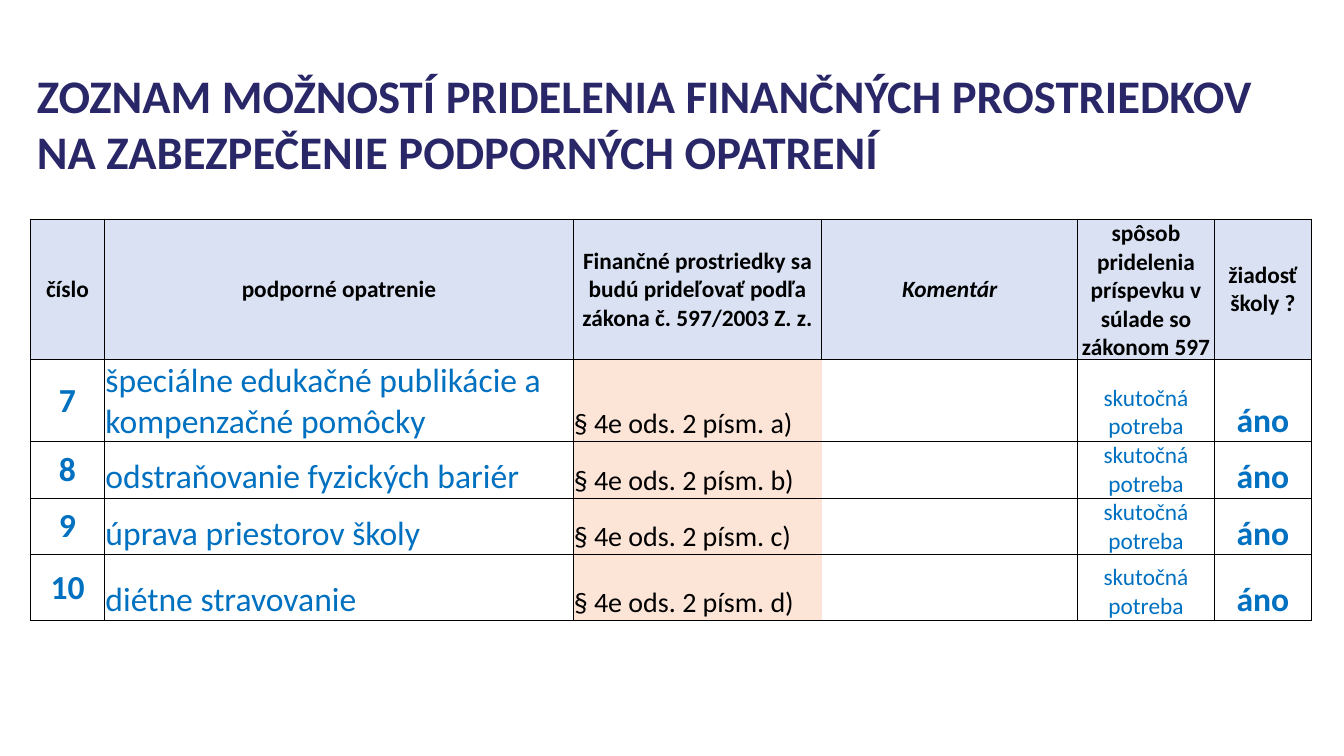
from dataclasses import dataclass

from lxml.etree import SubElement
from pptx import Presentation
from pptx.dml.color import RGBColor as RGB
from pptx.enum.text import MSO_ANCHOR as Anchor, PP_ALIGN as Align
from pptx.oxml.ns import qn
from pptx.util import Pt


@dataclass(frozen=True)
class Theme:
    font: str = "Calibri"
    navy: RGB = RGB(0x2A, 0x27, 0x68)
    blue: RGB = RGB(0x00, 0x70, 0xC0)
    black: RGB = RGB(0, 0, 0)
    header_fill: RGB = RGB(0xD9, 0xE1, 0xF2)
    law_fill: RGB = RGB(0xFC, 0xE4, 0xD6)
    title: int = 50
    large: int = 36
    medium: int = 30
    small: int = 25
    thick: float = 1
    thin: float = 0.5


@dataclass(frozen=True)
class CellStyle:
    size: int
    color: RGB
    bold: bool = False
    italic: bool = False
    align: Align = Align.CENTER
    anchor: Anchor = Anchor.BOTTOM
    fill: RGB | None = None


T = Theme()
LAW, COMMENT = 2, 3
WIDTHS = [79.9, 501.8, 266.4, 274.3, 146.2, 104.4]
HEIGHTS = [119.5, 54.7, 48.2, 55.4, 70.6]
TITLE = ("ZOZNAM MOŽNOSTÍ PRIDELENIA FINANČNÝCH PROSTRIEDKOV\n"
         "NA ZABEZPEČENIE PODPORNÝCH OPATRENÍ")
HEADERS = [
    "číslo",
    "podporné opatrenie",
    "Finančné prostriedky sa budú prideľovať podľa zákona č. 597/2003 Z. z.",
    "Komentár",
    "spôsob pridelenia príspevku v súlade so zákonom 597",
    "žiadosť školy ?",
]
MEASURES = [
    ("7", "špeciálne edukačné publikácie a kompenzačné pomôcky", "a"),
    ("8", "odstraňovanie fyzických bariér", "b"),
    ("9", "úprava priestorov školy", "c"),
    ("10", "diétne stravovanie", "d"),
]
BODY_STYLES = [
    CellStyle(T.large, T.blue, bold=True, anchor=Anchor.MIDDLE),
    CellStyle(T.large, T.blue, align=Align.LEFT),
    CellStyle(T.medium, T.black, align=Align.LEFT, fill=T.law_fill),
    CellStyle(T.small, T.black),
    CellStyle(T.small, T.blue),
    CellStyle(T.large, T.blue, bold=True),
]


def set_font(p, size, color, bold, italic=False):
    font = p.font
    font.name, font.size, font.color.rgb = T.font, Pt(size), color
    font.bold, font.italic = bold, italic


def set_borders(cell, left, right, top, bottom):
    tc_pr = cell._tc.get_or_add_tcPr()
    sides = zip(("a:lnL", "a:lnR", "a:lnT", "a:lnB"), (left, right, top, bottom))
    for i, (tag, width) in enumerate(sides):
        ln = SubElement(tc_pr, qn(tag), w=str(Pt(width)))
        if width:
            fill = SubElement(ln, qn("a:solidFill"))
            SubElement(fill, qn("a:srgbClr"), val=str(T.black))
        else:
            SubElement(ln, qn("a:noFill"))
        tc_pr.insert(i, ln)


def fill_cell(cell, text, style):
    cell.margin_left = cell.margin_right = cell.margin_top = Pt(0.75)
    cell.margin_bottom = Pt(0)
    cell.vertical_anchor = style.anchor
    if style.fill is None:
        cell.fill.background()
    else:
        cell.fill.solid()
        cell.fill.fore_color.rgb = style.fill
    cell.text = text
    p = cell.text_frame.paragraphs[0]
    p.alignment = style.align
    set_font(p, style.size, style.color, style.bold, style.italic)


def add_title(slide, left, top, width, height):
    tf = slide.shapes.add_textbox(Pt(left), Pt(top), Pt(width), Pt(height)).text_frame
    tf.word_wrap = True
    tf.vertical_anchor = Anchor.MIDDLE
    p = tf.paragraphs[0]
    p.text = TITLE
    set_font(p, T.title, T.navy, True)


def add_measures(slide, left, top, width, height):
    rows = [HEADERS] + [
        (number, measure, f"§ 4e ods. 2 písm. {letter})", "", "skutočná potreba", "áno")
        for number, measure, letter in MEASURES
    ]
    table = slide.shapes.add_table(
        len(rows), len(HEADERS), Pt(left), Pt(top), Pt(width), Pt(height)).table
    table.first_row = table.horz_banding = False
    for column, w in zip(table.columns, WIDTHS):
        column.width = Pt(w)
    for row, h in zip(table.rows, HEIGHTS):
        row.height = Pt(h)

    for r, texts in enumerate(rows):
        for c, text in enumerate(texts):
            cell = table.cell(r, c)
            if r == 0:
                style = CellStyle(T.small, T.black, bold=True, italic=c == COMMENT,
                                  anchor=Anchor.MIDDLE, fill=T.header_fill)
            else:
                style = BODY_STYLES[c]
            fill_cell(cell, text, style)
            set_borders(
                cell,
                left=0 if r and c == COMMENT else T.thick,
                right=0 if r and c == LAW else T.thick,
                top=T.thick if r < 2 else T.thin,
                bottom=T.thin if r else T.thick,
            )


def main():
    prs = Presentation()
    prs.slide_width, prs.slide_height = Pt(1440), Pt(810)
    slide = prs.slides.add_slide(prs.slide_layouts[6])
    add_title(slide, 32.4, 117.4, 1345.7, 28)
    add_measures(slide, 32.4, 234.7, 1372.3, 429.8)
    prs.save("out.pptx")


if __name__ == "__main__":
    main()
